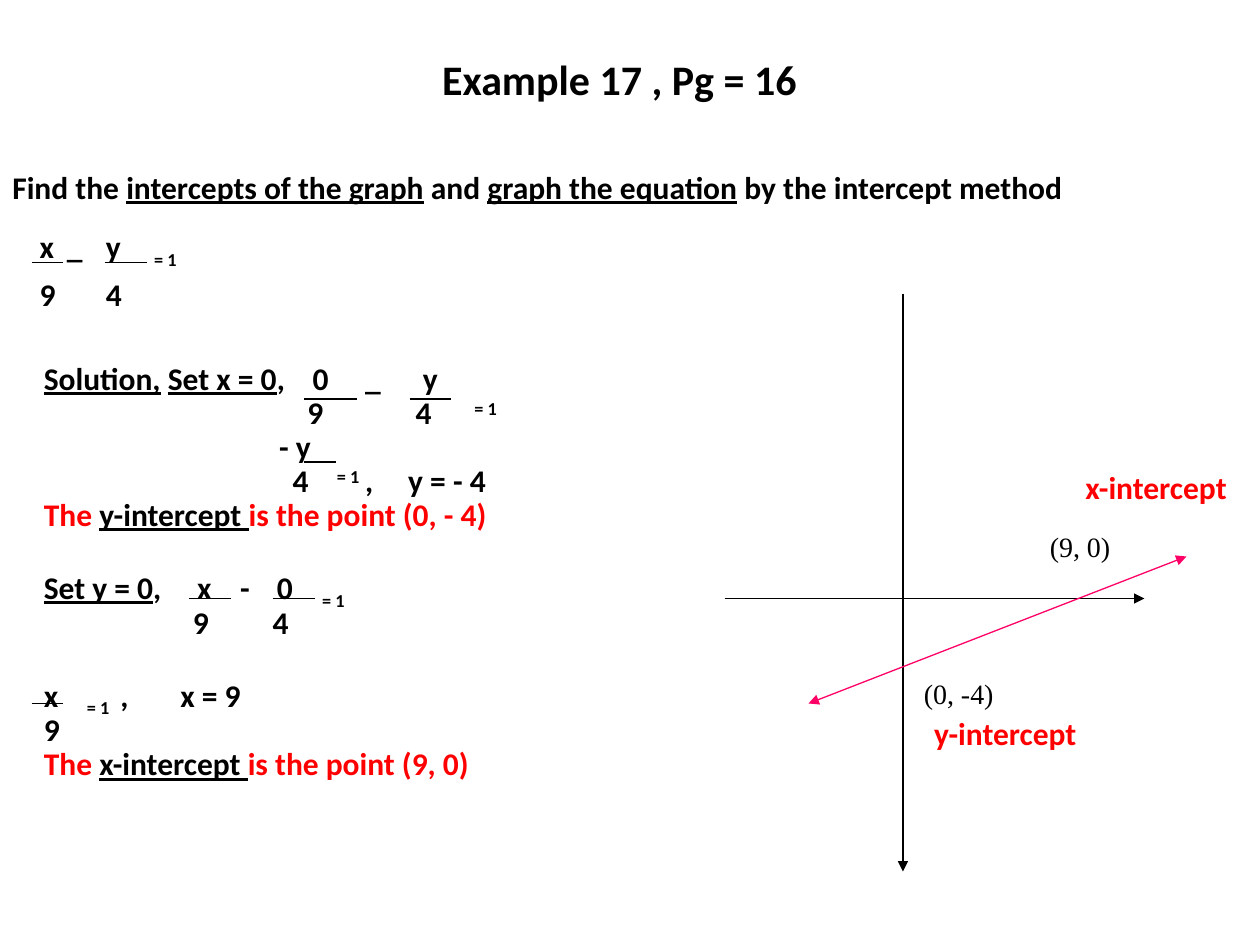
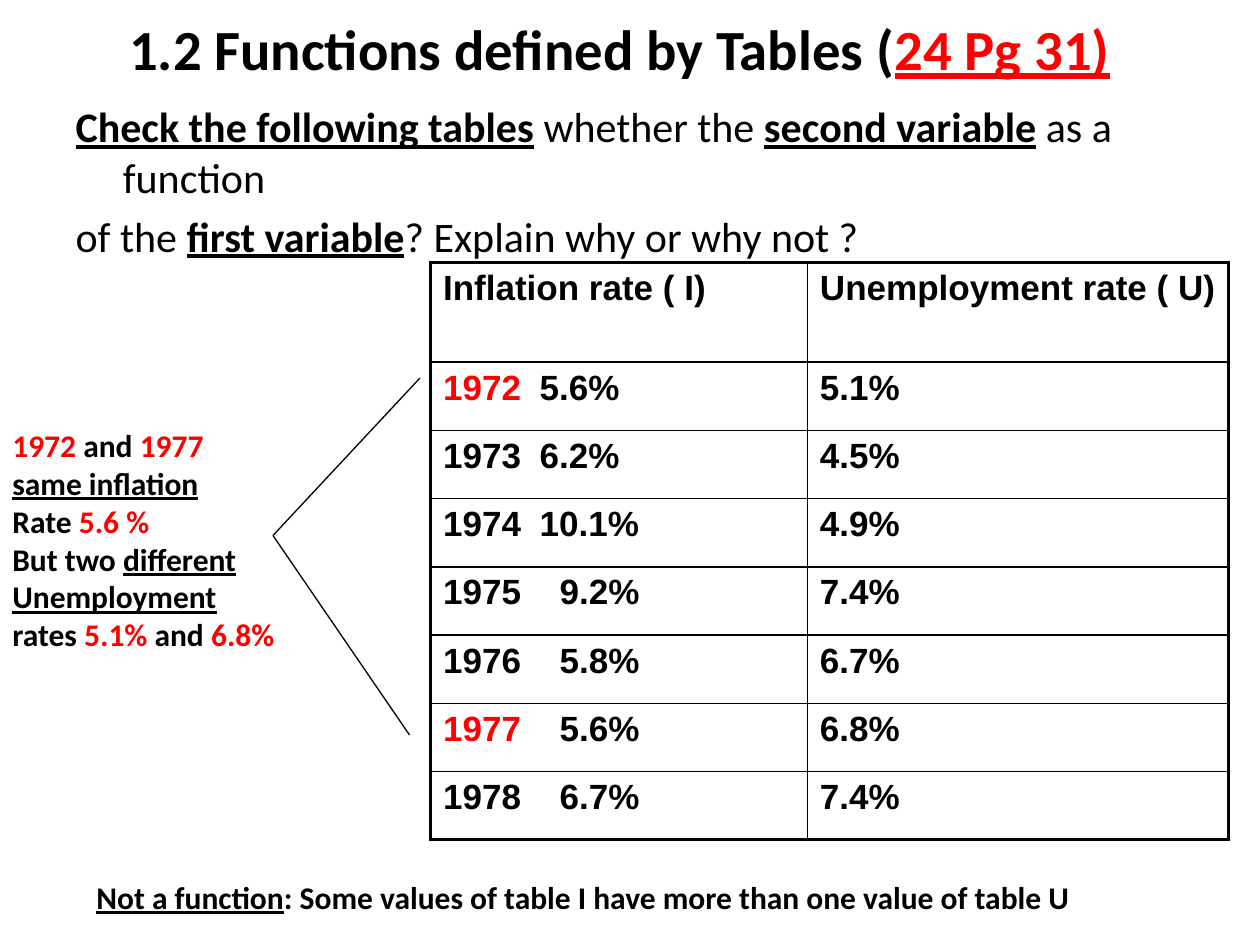
from lxml import etree
from pptx import Presentation
from pptx import util as u
from pptx.dml.color import RGBColor
from pptx.enum import shapes, text
from pptx.oxml import ns

PX = 7620  # EMU per px, 120 px to the inch
BLACK, RED, PINK, WHITE = "000000", "FF0000", "FF0066", "FFFFFF"


def emu(*lengths):
    return [u.Emu(n * PX) for n in lengths]


def rgb(value):
    return RGBColor.from_string(value)


def sub(parent, tag, **attrs):
    return etree.SubElement(parent, ns.qn(tag), **attrs)


class Deck:
    """Holds the shared style and the current slide.

    A paragraph is a list of runs: a plain string, or (string, marks) with
    marks u underlined, r red, b bold, ^ superscript, _ subscript.
    """
    font = "Calibri"
    title_box = (50, 0, 1080, 150)

    def __init__(self):
        self.prs = Presentation()
        self.prs.slide_width, self.prs.slide_height = emu(1200, 900)

    def slide(self, layout, title, size):
        self.s = self.prs.slides.add_slide(self.prs.slide_layouts[layout])
        self.s.background.fill.solid()
        self.s.background.fill.fore_color.rgb = rgb(WHITE)
        sp = self.s.shapes.title
        self.place(sp, *self.title_box)
        sp.text_frame.vertical_anchor = text.MSO_ANCHOR.MIDDLE
        p = sp.text_frame.paragraphs[0]
        p.alignment = text.PP_ALIGN.CENTER
        self.add_runs(p, title, size)
        return sp

    def place(self, sp, *box):
        sp.left, sp.top, sp.width, sp.height = emu(*box)

    def add_runs(self, p, runs, size=18, font=None, bold=True, color=BLACK, tabs=()):
        p.font.name, p.font.size, p.font.bold = font or self.font, u.Pt(size), bold
        p.font.color.rgb = rgb(color)
        for run in runs:
            words, marks = (run, "") if isinstance(run, str) else run
            r = p.add_run()
            r.text = words
            if "u" in marks:
                r.font.underline = True
            if "b" in marks:
                r.font.bold = True
            if "r" in marks:
                r.font.color.rgb = rgb(RED)
            for mark, shift in (("^", "30000"), ("_", "-25000")):
                if mark in marks:
                    r._r.get_or_add_rPr().set("baseline", shift)
        if tabs:
            stops = etree.Element(ns.qn("a:tabLst"))
            for stop in tabs:
                sub(stops, "a:tab", pos=str(stop * PX), algn="l")
            p._p.get_or_add_pPr().find(ns.qn("a:defRPr")).addprevious(stops)

    def fill_text(self, tf, paras, **style):
        for i, runs in enumerate(paras):
            p = tf.add_paragraph() if i else tf.paragraphs[0]
            self.add_runs(p, runs, **style)

    def text(self, box, paras, **style):
        tf = self.s.shapes.add_textbox(*emu(*box)).text_frame
        tf.word_wrap = True
        self.fill_text(tf, paras, **style)
        return tf

    def tabbed(self, box, rows):
        """Rows of (runs, tab stops, points above), set slightly tight."""
        tf = self.text(box, [])
        for i, (runs, tabs, above) in enumerate(rows):
            p = tf.add_paragraph() if i else tf.paragraphs[0]
            p.line_spacing = 0.9
            p.space_before = u.Pt(above)
            self.add_runs(p, runs, tabs=tabs)

    def body(self, box, paras, size, indent):
        sp = self.s.placeholders[1]
        self.place(sp, *box)
        self.fill_text(sp.text_frame, paras, size=size, bold=False)
        for p in sp.text_frame.paragraphs:
            pPr = p._p.get_or_add_pPr()
            pPr.set("marL", str(indent * PX))
            pPr.set("indent", str(-indent * PX))
            pPr.find(ns.qn("a:defRPr")).addprevious(etree.Element(ns.qn("a:buNone")))

    def line(self, x1, y1, x2, y2, color=BLACK, arrows=()):
        c = self.s.shapes.add_connector(shapes.MSO_CONNECTOR.STRAIGHT, *emu(x1, y1, x2, y2))
        c.line.color.rgb = rgb(color)
        c.line.width = u.Pt(0.75)
        spPr = c._element.spPr
        for end in arrows:
            sub(spPr.find(ns.qn("a:ln")), f"a:{end}", type="triangle")
        sub(spPr, "a:effectLst")

    def table(self, left, top, widths, heights, rows, size, font):
        frame = self.s.shapes.add_table(len(rows), len(widths),
                                        *emu(left, top, sum(widths), sum(heights)))
        tbl = frame.table
        tbl.first_row = tbl.horz_banding = False
        for col, width in zip(tbl.columns, emu(*widths)):
            col.width = width
        for row, height in zip(tbl.rows, emu(*heights)):
            row.height = height
        for i, row in enumerate(rows):
            for j, (runs, tabs) in enumerate(row):
                cell = tbl.cell(i, j)
                self.add_runs(cell.text_frame.paragraphs[0], runs, size, font, tabs=tabs)
                outer = {"L": j == 0, "R": j == len(widths) - 1,
                         "T": i == 0, "B": i == len(rows) - 1}
                self.borders(cell, outer)
                cell.fill.background()

    def borders(self, cell, outer):
        tcPr = cell._tc.get_or_add_tcPr()
        for side, thick in outer.items():
            ln = sub(tcPr, f"a:ln{side}", w=str(int(u.Pt(2.25 if thick else 1))))
            sub(sub(ln, "a:solidFill"), "a:srgbClr", val=BLACK)


def intercepts(d):
    d.slide(5, ["Example 17 , Pg = 16"], 24)

    # Axes and graph
    d.line(690, 570, 1090, 570, arrows=["tailEnd"])
    d.line(860, 280, 860, 830, arrows=["tailEnd"])
    d.line(770, 670, 1130, 530, PINK, ["headEnd", "tailEnd"])
    for x, y, point in ((868, 638, "(0, -4)"), (988, 498, "(9, 0)")):
        d.text((x, y, 100, 44), [[point]], size=16, font="Times New Roman", bold=False)
    for x, y, name in ((878, 674, "y-intercept"), (1022, 440, "x-intercept")):
        d.text((x, y, 178, 48), [[name]], color=RED)

    # Fraction bars
    for x, y, width in ((30, 250, 30), (100, 250, 40), (290, 380, 50), (390, 380, 40),
                        (290, 440, 30), (30, 670, 30), (180, 570, 40), (260, 570, 40)):
        d.line(x, y, x + width, y)

    # Question
    d.text((0, 154, 1200, 48), [[
        "Find the ", ("intercepts of the graph", "u"), " and ",
        ("graph the equation", "u"), " by the intercept method"]])
    d.text((20, 210, 200, 48), [["\tx\t_\ty\t", ("= 1", "_")]], tabs=(6, 32, 69, 115))
    d.tabbed((20, 260, 140, 44), [(["\t9\t4"], (6, 69), 0)])

    # Solution
    def conclusion(axis, point):
        return [("The ", "r"), (f"{axis}-intercept ", "u"), (f"is the point {point}", "r")], (), 0

    d.tabbed((30, 340, 600, 404), [
        ([("Solution,", "u"), " ", ("Set x = 0", "u"), ",\t0\t_\ty"], (256, 306, 361), 0),
        (["\t9\t4\t", ("= 1", "^")], (251, 354, 410), 0),
        (["\t- y"], (224,), 0),
        (["\t4\t", ("= 1", "^"), "\t,\ty = - 4"], (237, 279, 306, 347), 0),
        conclusion("y", "(0, - 4)"),
        ([("Set y = 0", "u"), ",\tx\t-\t0\t", ("= 1", "_")], (146, 187, 222, 265), 20),
        (["\t9\t4"], (142, 218), 0),
        (["x\t", ("= 1", "_"), "\t,\tx = 9"], (41, 73, 130), 20),
        (["9"], (), 0),
        conclusion("x", "(9, 0)"),
    ])


def functions_by_tables(d):
    title = d.slide(1, ["1.2 Functions defined by Tables (", ("24 Pg 31)", "ur")], 32.4)
    title.text_frame.margin_bottom = u.Emu(65 * PX)
    d.body((60, 90, 1140, 594), [
        [("Check the following tables", "bu"), " whether the ",
         ("second variable", "bu"), " as a function"],
        ["of the ", ("first variable", "bu"), "? Explain why or why not ?"],
    ], 24, 45)

    # Yearly rates: year, inflation, unemployment
    rates = [("1972", "5.6%", "5.1%"), ("1973", "6.2%", "4.5%"), ("1974", "10.1%", "4.9%"),
             ("1975", "9.2%", "7.4%"), ("1976", "5.8%", "6.7%"), ("1977", "5.6%", "6.8%"),
             ("1978", "6.7%", "7.4%")]
    rows = [[(["Inflation rate ( I)"], ()), (["Unemployment rate ( U)"], ())]]
    for year, inflation, unemployment in rates:
        mark = "r" if inflation == "5.6%" else ""
        stop = 111 if year >= "1975" else 92
        rows.append([([(year, mark), "\t" + inflation], (stop,)), ([unemployment], ())])
    d.table(410, 250, (359, 401), [95] + [65] * len(rates), rows, 20, "Arial")

    # Conclusion
    d.text((80, 830, 1081, 48), [[
        ("Not a function", "u"),
        ": Some values of table I have more than one value of table U"]])

    # Note pointing at the two matching rows
    d.line(400, 360, 260, 510)
    d.line(390, 700, 260, 510)
    d.text((0, 400, 319, 228), [
        [("1972", "r"), " and ", ("1977", "r")],
        [("same inflation", "u")],
        ["Rate ", ("5.6 %", "r")],
        ["But two ", ("different", "u")],
        [("Unemployment", "u")],
        ["rates ", ("5.1%", "r"), " and ", ("6.8%", "r")],
    ])


def main():
    d = Deck()
    intercepts(d)
    functions_by_tables(d)
    d.prs.save("out.pptx")


if __name__ == "__main__":
    main()
